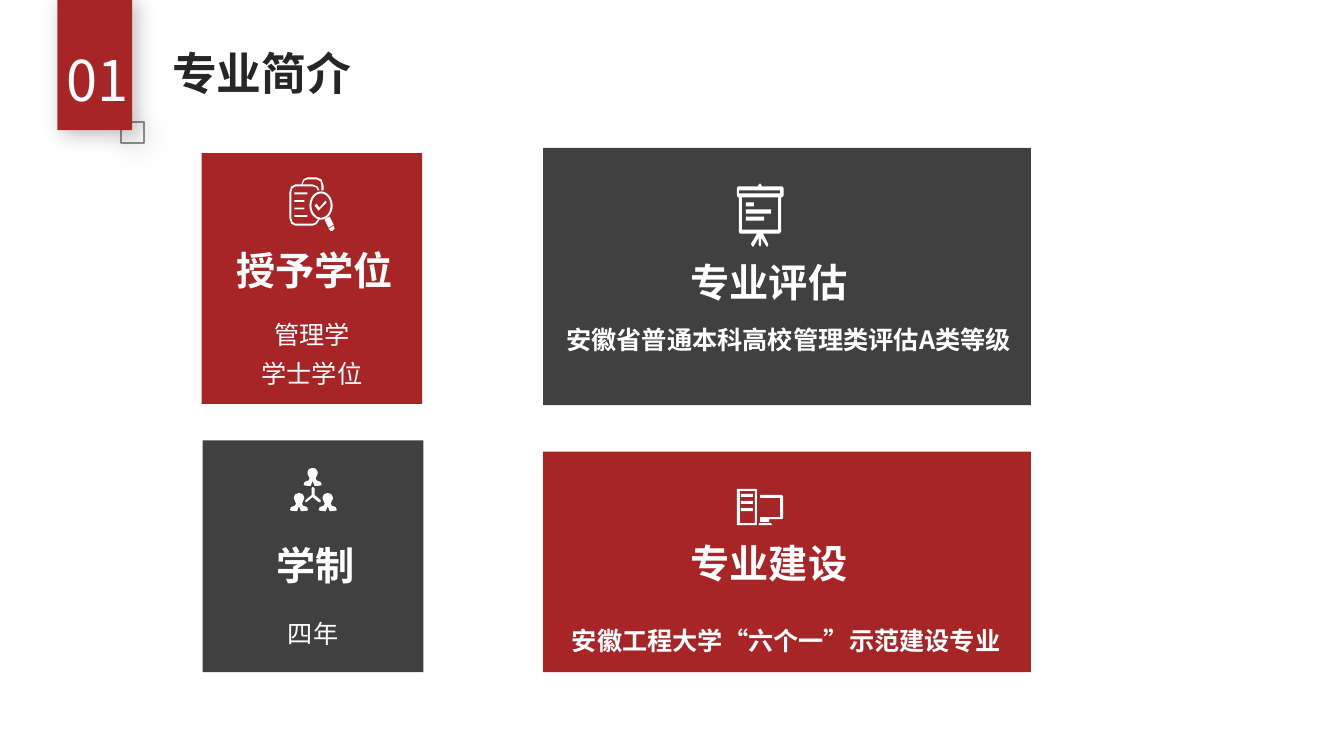
import math
from pptx import Presentation
from pptx import util as u
from pptx.dml.color import RGBColor
from pptx.enum import shapes, text
from pptx.oxml import parse_xml
from pptx.oxml.ns import qn
from lxml import etree

Cm, Pt = u.Cm, u.Pt
FONT = "Noto Sans CJK SC"
HUES = {"red": "A72527", "dark": "404040", "ink": "262626", "white": "FFFFFF", "gray": "8C8C8C"}
UNIT = Cm(0.0254)
STEP = 10


def hue(name):
    return RGBColor.from_string(HUES[name])


def paint(shape, tone):
    shape.shadow.inherit = False
    shape.fill.solid()
    shape.fill.fore_color.rgb = hue(tone)
    shape.line.fill.background()


def add_block(parent, box, tone):
    block = parent.shapes.add_shape(shapes.MSO_SHAPE.RECTANGLE, *map(Cm, box))
    paint(block, tone)
    return block


def add_shade(shape):
    list_ = shape._element.spPr.find(qn("a:effectLst"))
    list_.append(parse_xml(
        '<a:outerShdw xmlns:a="http://schemas.openxmlformats.org/drawingml/2006/main" '
        'blurRad="190500" dist="63500" dir="2700000" algn="tl" rotWithShape="0">'
        '<a:srgbClr val="000000"><a:alpha val="25000"/></a:srgbClr></a:outerShdw>'))


def add_words(parent, box, lines, size, tone="white", bold=False, wrap=True,
              inset=True, pitch=None, after=None, align=text.PP_ALIGN.CENTER):
    frame = parent.shapes.add_textbox(*map(Cm, box)).text_frame
    frame.word_wrap = wrap
    if not inset:
        frame.margin_left = frame.margin_right = frame.margin_top = frame.margin_bottom = 0
    for i, line in enumerate(lines):
        para = frame.add_paragraph() if i else frame.paragraphs[0]
        para.alignment = align
        para.line_spacing = pitch
        para.space_after = after
        run = para.add_run()
        run.text = line
        font = run.font
        font.name, font.size, font.bold = FONT, Pt(size), bold
        font.color.rgb = hue(tone)
        etree.SubElement(run._r.get_or_add_rPr(), qn("a:ea")).set("typeface", FONT)


def bar(x, y, w, h):
    return [(x, y), (x + w, y), (x + w, y + h), (x, y + h)]


def oval(x, y, rx, ry, count=32):
    turns = [2 * math.pi * i / count for i in range(count)]
    return [(x + rx * math.cos(t), y + ry * math.sin(t)) for t in turns]


def person(x, y):
    half = [(0, 0), (3.5, 1), (5, 4), (5, 6), (4, 8), (3, 10.5), (4, 12.5),
            (8, 14), (9, 17), (7, 17.7), (2, 18), (0, 13)]
    left = [(-a, b) for a, b in reversed(half[1:-1])]
    return [(x + a, y + b) for a, b in half + left]


def search_icon():
    page = [(28, 42), (30, 42), (27, 46.5), (23, 48), (6, 48), (2, 46), (0, 40), (0, 15),
            (2, 9), (6, 7), (12, 7), (14, 2), (18, 0), (27, 0), (32, 2), (34, 8), (34, 13),
            (32, 13), (32, 8), (31, 4), (27, 2), (18, 2), (15, 3), (13, 7), (23, 7), (28, 9),
            (30, 13), (28, 13), (27, 10), (23, 9), (6, 9), (3, 11), (2, 15), (2, 40),
            (3, 44), (6, 46), (23, 46), (26, 45)]
    check = [(30, 30), (27, 26), (25, 28), (29, 33), (37, 25), (36, 23)]
    grip = [(40, 39), (35, 42), (39, 50), (44, 47)]
    tip = [(44, 48), (39, 51), (41, 53), (43, 53), (45, 51)]
    rows = [bar(5, 15 + 7.5 * i, w, 1.8) for i, w in enumerate((13, 10, 10, 13))]
    return [page, oval(31.5, 28, 11.5, 14), oval(31.5, 28, 9.5, 12), check, grip, tip] + rows


def team_icon():
    fork = [(22, 19), (24, 20), (24, 27), (30, 32), (30, 34), (28, 34), (22, 29),
            (16, 34), (14.5, 33.5), (15, 32), (21, 27), (21, 20)]
    return [person(22, 0), person(8.5, 25), person(37, 25), fork]


def board_icon():
    stand = [(23, 0), (24.5, 2), (24.5, 3), (45, 3), (46.5, 5), (46.5, 12), (45, 14),
             (44, 14), (44, 48), (42, 50), (26, 50), (31, 60), (31, 62), (30, 63), (29, 62),
             (24, 54), (24, 61), (23, 63), (21.5, 61), (21.5, 54), (17, 62), (16, 63),
             (15, 62), (14, 60), (20, 50), (3, 50), (2, 48), (2, 14), (1, 14), (0, 12),
             (0, 5), (1, 3), (21, 3), (21, 2)]
    rows = [bar(9, 19 + 7 * i, w, 4) for i, w in enumerate((8, 25, 18))]
    return [stand, bar(5, 14, 36, 32), bar(2, 7, 41, 3)] + rows


def desk_icon():
    screen = [(23, 6), (45, 6), (46, 8), (46, 29), (45, 30), (32, 30), (32, 33), (23, 33),
              (23, 28), (43, 28), (43, 9), (23, 9)]
    foot = [(22, 34), (34, 34), (35, 36), (22, 36)]
    rows = [bar(4, 5 + 7 * i, 12, 3) for i in range(3)]
    return [bar(0, 0, 20, 36), bar(3, 2, 15, 32), screen, foot] + rows


def add_icon(parent, x, y, loops):
    loops = [[(a * STEP, b * STEP) for a, b in loop] for loop in loops]
    pen = parent.shapes.build_freeform(*loops[0][0], scale=UNIT / STEP)
    for i, loop in enumerate(loops):
        if i:
            pen.move_to(*loop[0])
        pen.add_line_segments(loop[1:], close=True)
    paint(pen.convert_to_shape(Cm(x), Cm(y)), "white")


def add_header(slide, x, y, mark, title):
    square = add_block(slide, (x + 1.6, y + 3.07, 0.58, 0.54), "white")
    square.fill.background()
    square.line.color.rgb = hue("gray")
    square.line.width = Pt(1.5)
    add_shade(square)
    add_shade(add_block(slide, (x, y - 0.1, 1.88, 3.38), "red"))
    add_words(slide, (x - 0.28, y + 1.02, 2.57, 1.96), [mark], 40)
    add_words(slide, (x + 2.64, y + 1.04, 5.08, 1.63), [title], 32, "ink", True, False,
              align=text.PP_ALIGN.LEFT)


def add_card(slide, box, tone, icon, head, lines, spots, wide):
    x, y, w, h = box
    card = slide.shapes.add_group_shape()
    add_block(card, box, tone)
    mark, title, body = [(x + a, y + b, *rest) for a, b, *rest in spots]
    add_words(card, title, [head], 28, bold=True, wrap=False, inset=False)
    add_icon(card, *mark, icon)
    if wide:
        add_words(card, body, lines, 18, bold=True, pitch=1.5)
    else:
        add_words(card, body, lines, 18, inset=False, pitch=Pt(18), after=Pt(10))


def main():
    deck = Presentation()
    deck.slide_width, deck.slide_height = Cm(33.87), Cm(19.05)
    slide = deck.slides.add_slide(deck.slide_layouts[6])
    slide.background.fill.solid()
    slide.background.fill.fore_color.rgb = hue("white")
    add_header(slide, 1.45, 0, "01", "专业简介")
    add_card(slide, (5.08, 3.86, 5.56, 6.32), "red", search_icon(), "授予学位",
             ["管理学", "学士学位"],
             [(2.21, 0.61), (0.86, 2.34, 3.99, 1.45), (0.38, 4.32, 4.8, 1.98)], False)
    add_card(slide, (5.11, 11.1, 5.56, 5.84), "dark", team_icon(), "学制", ["四年"],
             [(2.21, 0.69), (1.83, 2.54, 2.01, 1.24), (0.38, 4.62, 4.8, 0.66)], False)
    add_card(slide, (13.69, 3.73, 12.29, 6.48), "dark", board_icon(), "专业评估",
             ["安徽省普通本科高校管理类评估A类等级"],
             [(4.88, 0.89), (3.53, 2.79, 4.32, 1.4), (0.1, 3.94, 12.17, 1.27)], True)
    add_card(slide, (13.69, 11.38, 12.29, 5.56), "red", desk_icon(), "专业建设",
             ["安徽工程大学“六个一”示范建设专业"],
             [(4.88, 0.94), (3.53, 2.21, 4.32, 1.19), (0.38, 3.86, 11.48, 1.27)], True)
    deck.save("out.pptx")


if __name__ == "__main__":
    main()
